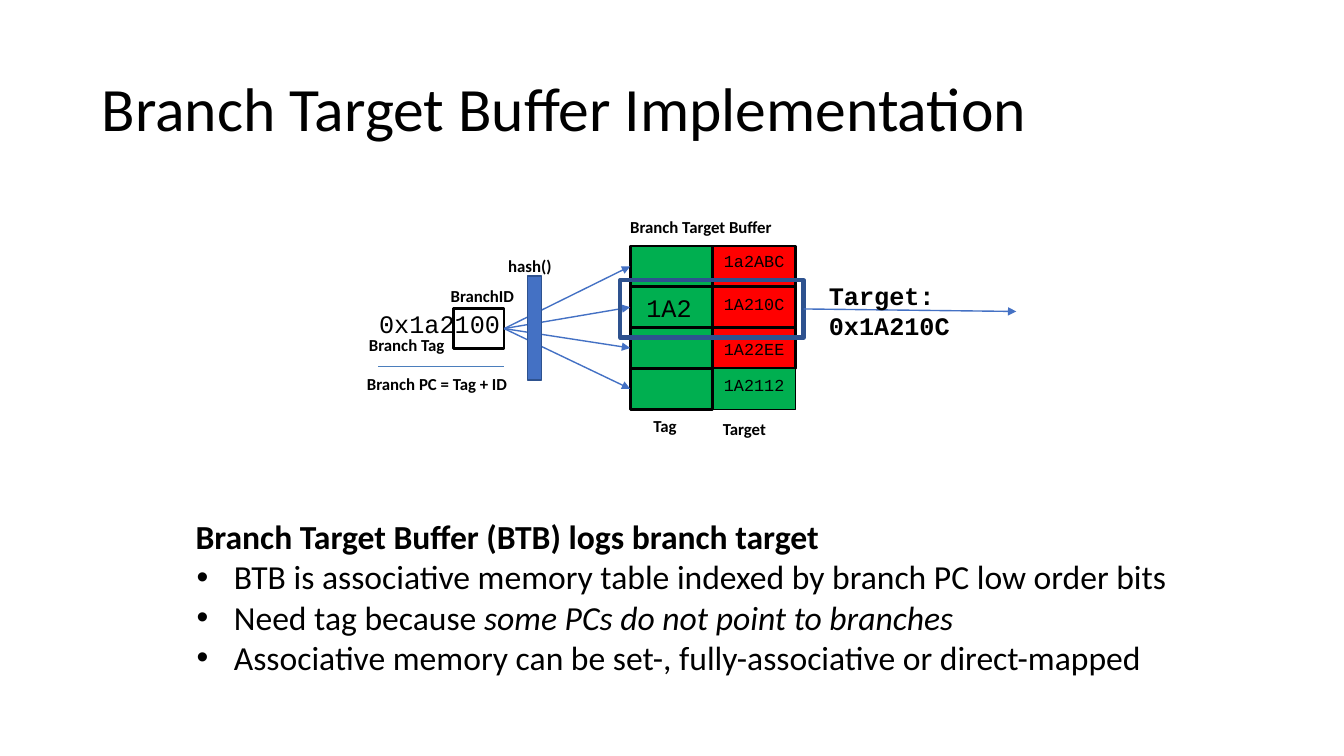
from dataclasses import dataclass

from lxml import etree
from pptx import Presentation
from pptx.dml.color import RGBColor
from pptx.enum import shapes, text
from pptx.oxml import ns
from pptx.util import Inches, Pt


@dataclass(frozen=True)
class Theme:
    black: str = "000000"
    red: str = "FF0000"
    green: str = "00AF50"
    blue: str = "4471C4"
    navy: str = "2E528F"
    rule: str = "4B7EBC"
    sans: str = "Calibri"
    mono: str = "Courier New"
    title: int = 44
    body: int = 24
    code: int = 18
    label: int = 12


@dataclass(frozen=True)
class Label:
    text: str
    left: float
    top: float
    width: float
    height: float = 0.23
    font: str = Theme.sans
    size: int = Theme.label
    bold: bool = True


@dataclass(frozen=True)
class Entry:
    """One row of the buffer; the insets place text below the row's top."""
    tag: str
    target: str
    target_inset: float
    target_fill: str = Theme.red
    target_line: float = 2


THEME = Theme()

TABLE_LEFT, TABLE_TOP = 6.25, 2.44
CELL_WIDTH, CELL_HEIGHT = 0.82, 0.405
ENTRIES = [
    Entry("", "1a2ABC", 0.05),
    Entry("1A2", "1A210C", 0.07),
    Entry("", "1A22EE", 0.11),
    Entry("", "1A2112", 0.06, THEME.green, 1),
]

LABELS = [
    Label("Branch Target Buffer", 6.24, 2.12, 1.6),
    Label("hash()", 5.03, 2.51, 0.6),
    Label("0x1a2100", 3.75, 3.03, 1.3, 0.33, THEME.mono, THEME.code, False),
    Label("BranchID", 4.46, 2.81, 0.8),
    Label("Branch Tag", 3.65, 3.29, 0.9),
    Label("Tag", 6.47, 4.09, 0.4),
    Label("Target", 7.16, 4.12, 0.6),
    Label("Target: 0x1A210C", 8.21, 2.75, 1.25, 0.63, THEME.mono, THEME.code),
    Label("Branch PC = Tag + ID", 3.63, 3.68, 1.6),
]

HEADING = "Branch Target Buffer (BTB) logs branch target"
# Each bullet is a list of (text, italic) pieces.
BULLETS = [
    [("BTB is associative memory table indexed by branch PC low order bits", False)],
    [("Need tag because ", False), ("some PCs do not point to branches", True)],
    [("Associative memory can be set-, fully-associative or direct-mapped", False)],
]


def write(paragraph, content: str, *, font: str = THEME.sans,
          size: float = THEME.label, bold: bool = False, italic: bool = False) -> None:
    run = paragraph.add_run()
    run.text = content
    run.font.name = font
    run.font.size = Pt(size)
    run.font.bold = bold
    run.font.italic = italic
    run.font.color.rgb = RGBColor.from_string(THEME.black)
    paragraph.alignment = text.PP_ALIGN.LEFT


def set_frame(shape, left: float = 0.01, top: float = 0.03):
    frame = shape.text_frame
    frame.word_wrap = True
    frame.vertical_anchor = text.MSO_ANCHOR.TOP
    frame.margin_left, frame.margin_top = Inches(left), Inches(top)
    frame.margin_right = frame.margin_bottom = 0
    return frame


def add_text_box(slide, left: float, top: float, width: float, height: float):
    box = slide.shapes.add_textbox(Inches(left), Inches(top), Inches(width), Inches(height))
    return set_frame(box)


def add_label(slide, label: Label) -> None:
    frame = add_text_box(slide, label.left, label.top, label.width, label.height)
    write(frame.paragraphs[0], label.text, font=label.font, size=label.size, bold=label.bold)


def add_box(slide, left: float, top: float, width: float, height: float, *,
            fill: str | None = None, line: str = THEME.black, weight: float = 2):
    box = slide.shapes.add_shape(shapes.MSO_SHAPE.RECTANGLE, Inches(left), Inches(top),
                                 Inches(width), Inches(height))
    box.shadow.inherit = False
    if fill:
        box.fill.solid()
        box.fill.fore_color.rgb = RGBColor.from_string(fill)
    else:
        box.fill.background()
    box.line.color.rgb = RGBColor.from_string(line)
    box.line.width = Pt(weight)
    return box


def add_line(slide, x1: float, y1: float, x2: float, y2: float, *,
             color: str, weight: float, arrow: bool = False):
    line = slide.shapes.add_connector(shapes.MSO_CONNECTOR.STRAIGHT, Inches(x1), Inches(y1),
                                      Inches(x2), Inches(y2))
    line.line.color.rgb = RGBColor.from_string(color)
    line.line.width = Pt(weight)
    if arrow:
        etree.SubElement(line.line._get_or_add_ln(), ns.qn("a:tailEnd"), type="triangle")
    etree.SubElement(line._element.spPr, ns.qn("a:effectLst"))
    return line


def add_table_cells(slide) -> list:
    """Draw the buffer's cells and return the tag cells, top to bottom."""
    tag_cells = []
    for row, entry in enumerate(ENTRIES):
        top = TABLE_TOP + row * CELL_HEIGHT
        target = add_box(slide, TABLE_LEFT + CELL_WIDTH, top, CELL_WIDTH, CELL_HEIGHT,
                         fill=entry.target_fill, weight=entry.target_line)
        write(set_frame(target, 0.11, entry.target_inset).paragraphs[0], entry.target,
              font=THEME.mono)
        tag = add_box(slide, TABLE_LEFT, top, CELL_WIDTH, CELL_HEIGHT, fill=THEME.green)
        if entry.tag:
            write(set_frame(tag, 0.16, 0.06).paragraphs[0], entry.tag,
                  font=THEME.mono, size=THEME.code)
        tag_cells.append(tag)
    return tag_cells


def add_diagram(slide) -> None:
    tag_cells = add_table_cells(slide)
    branch_id = add_box(slide, 4.5, 3.06, 0.5, 0.4)
    for cell in tag_cells:
        arrow = add_line(slide, 5, 3.26, TABLE_LEFT, 3.26,
                         color=THEME.blue, weight=1, arrow=True)
        arrow.begin_connect(branch_id, 3)
        arrow.end_connect(cell, 1)
    add_box(slide, 5.23, 2.74, 0.14, 1.03, fill=THEME.blue, line=THEME.navy, weight=1)
    hit_frame = add_box(slide, 6.15, 2.78, 1.82, 0.57, line=THEME.navy, weight=3)
    result = add_line(slide, 7.97, 3.06, 10.08, 3.09, color=THEME.blue, weight=1, arrow=True)
    result.begin_connect(hit_frame, 3)
    add_line(slide, 3.75, 3.64, 5, 3.64, color=THEME.rule, weight=0.75)
    for label in LABELS:
        add_label(slide, label)


def add_title(slide) -> None:
    title = slide.shapes.title
    title.left, title.top = Inches(0.26), Inches(0.21)
    title.width, title.height = Inches(12.81), Inches(1.23)
    write(set_frame(title, 0.75, 0.48).paragraphs[0],
          "Branch Target Buffer Implementation", size=THEME.title)


def add_summary(slide) -> None:
    frame = add_text_box(slide, 1.93, 5.09, 9.85, 1.63)
    write(frame.paragraphs[0], HEADING, size=THEME.body, bold=True)
    for pieces in BULLETS:
        paragraph = frame.add_paragraph()
        for content, italic in pieces:
            write(paragraph, content, size=THEME.body, italic=italic)
        properties = paragraph._p.get_or_add_pPr()
        properties.set("marL", str(Inches(0.38)))
        properties.set("indent", str(-Inches(0.37)))
        etree.SubElement(properties, ns.qn("a:buFont"), typeface="Arial")
        etree.SubElement(properties, ns.qn("a:buChar"), char="•")


def main() -> None:
    presentation = Presentation()
    presentation.slide_width, presentation.slide_height = Inches(13.33), Inches(7.5)
    slide = presentation.slides.add_slide(presentation.slide_layouts[5])
    add_title(slide)
    add_diagram(slide)
    add_summary(slide)
    presentation.save("out.pptx")


if __name__ == "__main__":
    main()
